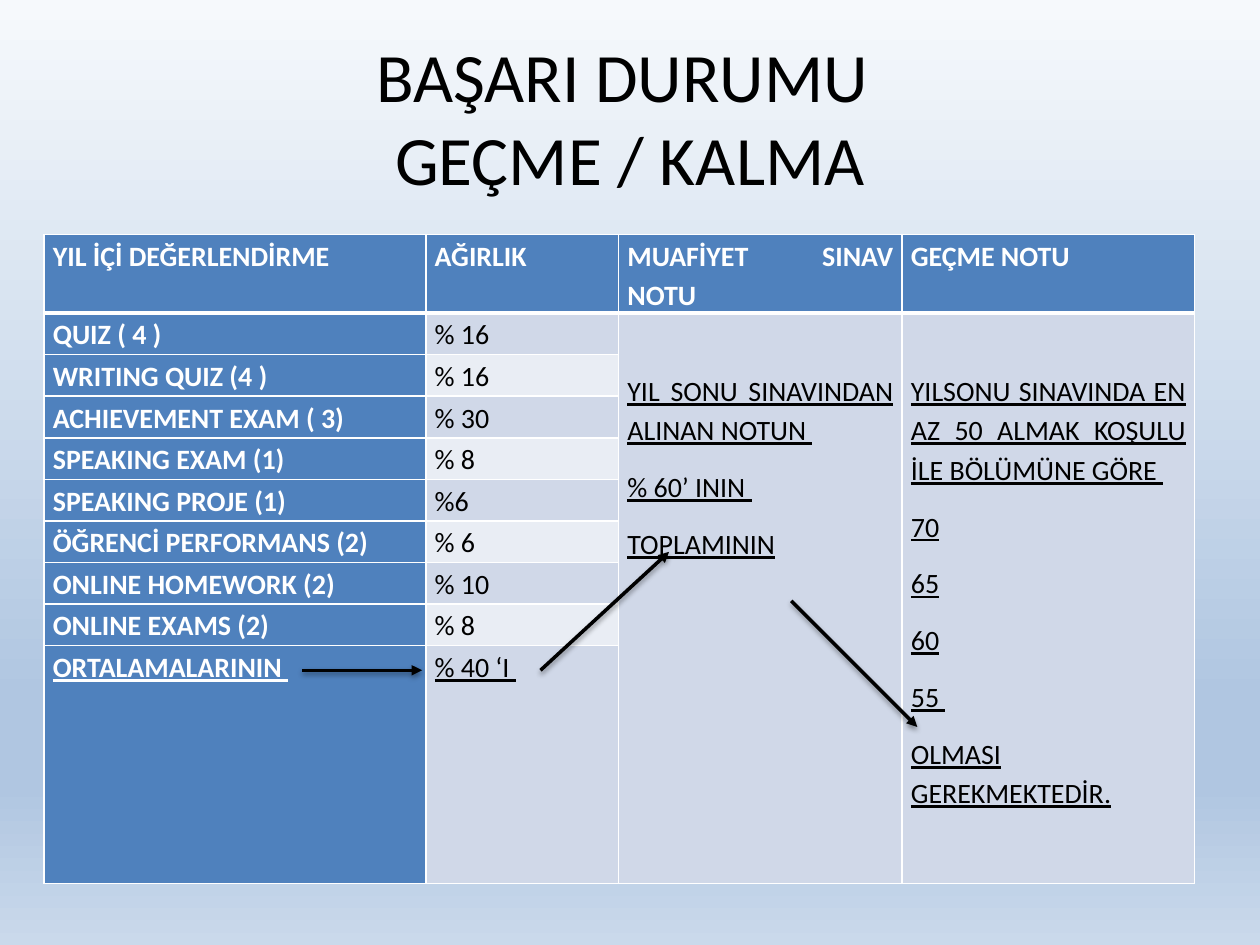
"""Build the pass / fail criteria slide with its grade weight table."""
from dataclasses import dataclass

import lxml.etree
import pptx
import pptx.dml.color
import pptx.enum.shapes
import pptx.enum.text
import pptx.oxml
import pptx.oxml.ns
import pptx.slide
import pptx.table
import pptx.util

Inches = pptx.util.Inches
Pt = pptx.util.Pt
RGB = pptx.dml.color.RGBColor.from_string
qn = pptx.oxml.ns.qn
Align = pptx.enum.text.PP_ALIGN
Anchor = pptx.enum.text.MSO_ANCHOR


@dataclass(frozen=True)
class Theme:
    font: str = "Calibri"
    title_size: float = 39.6
    table_size: float = 16
    ink: str = "000000"
    white: str = "FFFFFF"
    accent: str = "4F81BD"
    bands: tuple[str, str] = ("D0D8E8", "E9EDF4")
    backdrop: tuple[tuple[int, str], ...] = (
        (0, "F6F9FC"), (74, "B0C6E1"), (83, "B0C6E1"), (100, "CAD9EB"))
    border: float = 1
    header_border: float = 3
    arrow_width: float = 2


@dataclass(frozen=True)
class Assessment:
    label: str
    weight: str


@dataclass(frozen=True)
class Arrow:
    start: tuple[float, float]
    end: tuple[float, float]


THEME = Theme()
HEADINGS = ("YIL İÇİ DEĞERLENDİRME", "AĞIRLIK ", "MUAFİYET SINAV NOTU", "GEÇME NOTU")
ASSESSMENTS = (
    Assessment("QUIZ ( 4 )", "% 16"),
    Assessment("WRITING QUIZ (4 )", "% 16"),
    Assessment("ACHIEVEMENT EXAM ( 3)", "% 30"),
    Assessment("SPEAKING EXAM (1)", "% 8"),
    Assessment("SPEAKING PROJE (1)", "%6"),
    Assessment("ÖĞRENCİ PERFORMANS (2)", "% 6"),
    Assessment("ONLINE HOMEWORK (2)", "% 10"),
    Assessment("ONLINE EXAMS (2)", "% 8"),
    Assessment("ORTALAMALARININ ", "% 40 ‘I "),
)
FINAL_EXAM = "YIL SONU SINAVINDAN ALINAN NOTUN \n% 60’ ININ \nTOPLAMININ"
PASS_MARKS = ("YILSONU SINAVINDA EN AZ 50 ALMAK KOŞULU İLE BÖLÜMÜNE GÖRE \n"
              "70\n65\n60\n55 \nOLMASI GEREKMEKTEDİR.")
COLUMN_WIDTHS = (3.03, 1.53, 2.25, 2.32)
ROW_HEIGHTS = (0.62, *[0.33] * 8, 1.89)
ARROWS = (
    Arrow((2.4, 5.32), (3.35, 5.32)),
    Arrow((4.29, 5.32), (5.31, 4.38)),
    Arrow((6.28, 4.77), (7.28, 5.77)),
)


def paint_background(slide: pptx.slide.Slide) -> None:
    """Fill the slide with the vertical gradient of the theme."""
    fill = slide.background.fill
    fill.gradient()
    fill.gradient_angle = 270
    stops = next(slide.element.iter(qn("a:gsLst")))
    for stop in list(stops):
        stops.remove(stop)
    for percent, color in THEME.backdrop:
        stop = lxml.etree.SubElement(stops, qn("a:gs"), pos=str(percent * 1000))
        lxml.etree.SubElement(stop, qn("a:srgbClr"), val=color)


def write_title(slide: pptx.slide.Slide) -> None:
    """Place the two-line heading in the title placeholder."""
    title = slide.shapes.title
    title.left, title.top = Inches(0.5), Inches(0.3)
    title.width, title.height = Inches(9), Inches(1.25)
    frame = title.text_frame
    frame.text = "BAŞARI DURUMU \vGEÇME / KALMA"
    frame.auto_size = pptx.enum.text.MSO_AUTO_SIZE.NONE
    frame.vertical_anchor = Anchor.MIDDLE
    heading = frame.paragraphs[0]
    heading.alignment = Align.CENTER
    heading.font.size, heading.font.name = Pt(THEME.title_size), THEME.font
    heading.font.color.rgb = RGB(THEME.ink)


def set_borders(cell: pptx.table._Cell, top: float, bottom: float) -> None:
    """Outline a cell in white with the given top and bottom widths."""
    sides = {"L": THEME.border, "R": THEME.border, "T": top, "B": bottom}
    properties = cell._tc.get_or_add_tcPr()
    for position, (side, width) in enumerate(sides.items()):
        border = properties.makeelement(qn(f"a:ln{side}"), {"w": str(Pt(width))})
        solid = lxml.etree.SubElement(border, qn("a:solidFill"))
        lxml.etree.SubElement(solid, qn("a:srgbClr"), val=THEME.white)
        properties.insert(position, border)


def write_cell(cell: pptx.table._Cell, text: str, strong: bool,
               underline: bool = False, top_margin: float = 0) -> None:
    """Write justified text into a cell, bold white when strong."""
    cell.margin_left = cell.margin_right = Inches(0.07)
    cell.margin_top, cell.margin_bottom = Inches(top_margin), 0
    cell.text_frame.text = text
    for paragraph in cell.text_frame.paragraphs:
        paragraph.alignment = Align.JUSTIFY
        paragraph.line_spacing, paragraph.space_after = 1.15, Pt(10)
        font = paragraph.font
        font.name, font.size = THEME.font, Pt(THEME.table_size)
        font.bold, font.underline = strong, underline
        font.color.rgb = RGB(THEME.white if strong else THEME.ink)


def add_weight_table(slide: pptx.slide.Slide) -> None:
    """Draw the table of assessments, weights and pass marks."""
    weights = slide.shapes.add_table(
        len(ROW_HEIGHTS), len(COLUMN_WIDTHS), Inches(0.35), Inches(1.86),
        Inches(sum(COLUMN_WIDTHS)), Inches(sum(ROW_HEIGHTS))).table
    for column, width in zip(weights.columns, COLUMN_WIDTHS):
        column.width = Inches(width)
    for row, height in zip(weights.rows, ROW_HEIGHTS):
        row.height = Inches(height)
    last = len(ASSESSMENTS)
    for r in range(last + 1):
        for c in range(len(HEADINGS)):
            cell = weights.cell(r, c)
            band = THEME.bands[(r - 1) % 2 if c == 1 else 0]
            cell.fill.solid()
            cell.fill.fore_color.rgb = RGB(THEME.accent if r == 0 or c == 0 else band)
            set_borders(cell, THEME.header_border if r == 1 else THEME.border,
                        THEME.header_border if r == 0 else THEME.border)
    for c, heading in enumerate(HEADINGS):
        write_cell(weights.cell(0, c), heading, strong=True)
    for r, assessment in enumerate(ASSESSMENTS, start=1):
        write_cell(weights.cell(r, 0), assessment.label, True, r == last)
        write_cell(weights.cell(r, 1), assessment.weight, False, r == last)
    for c, condition in ((2, FINAL_EXAM), (3, PASS_MARKS)):
        weights.cell(1, c).merge(weights.cell(last, c))
        write_cell(weights.cell(1, c), condition, False, True, top_margin=0.45)


def add_arrow(slide: pptx.slide.Slide, arrow: Arrow) -> None:
    """Draw a black arrow with a soft shadow below it."""
    connector = slide.shapes.add_connector(
        pptx.enum.shapes.MSO_CONNECTOR.STRAIGHT,
        *map(Inches, arrow.start + arrow.end))
    connector.line.color.rgb = RGB(THEME.ink)
    connector.line.width = Pt(THEME.arrow_width)
    lxml.etree.SubElement(connector.line._get_or_add_ln(), qn("a:tailEnd"), type="triangle")
    effects = lxml.etree.SubElement(connector._element.spPr, qn("a:effectLst"))
    shadow = lxml.etree.SubElement(
        effects, qn("a:outerShdw"), blurRad=str(Pt(3.1)), dist=str(Pt(1.6)),
        dir="5400000", rotWithShape="0")
    shade = lxml.etree.SubElement(shadow, qn("a:srgbClr"), val=THEME.ink)
    lxml.etree.SubElement(shade, qn("a:alpha"), val="38000")


def main() -> None:
    """Assemble and save the slide."""
    presentation = pptx.Presentation()
    presentation.slide_width, presentation.slide_height = Inches(10), Inches(7.5)
    slide = presentation.slides.add_slide(presentation.slide_layouts[5])
    paint_background(slide)
    write_title(slide)
    add_weight_table(slide)
    for arrow in ARROWS:
        add_arrow(slide, arrow)
    presentation.save("out.pptx")


if __name__ == "__main__":
    main()
